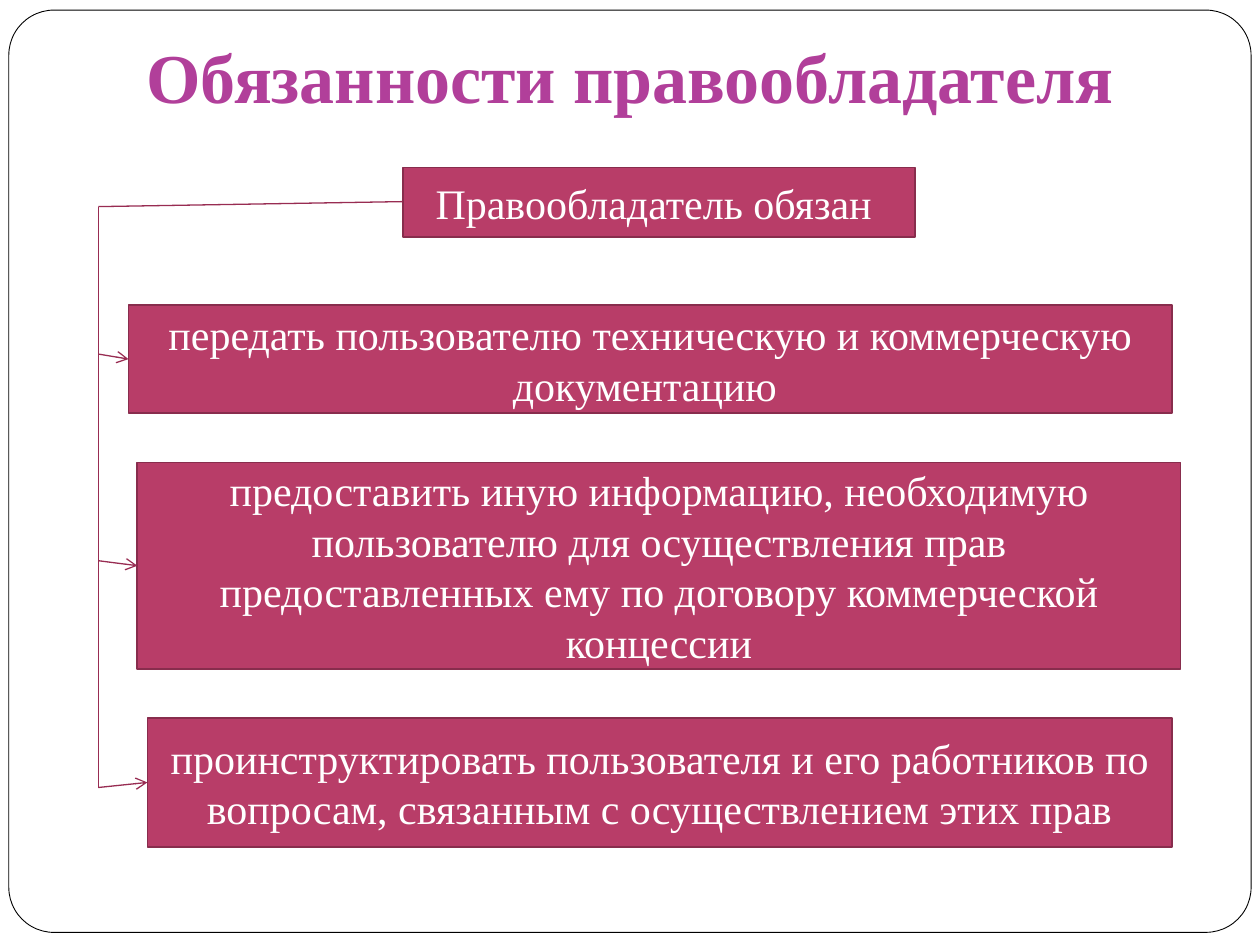
"""Slide listing the duties of the rights holder as a branching diagram."""
from lxml import etree
from pptx import Presentation
from pptx.dml.color import RGBColor
from pptx.enum import shapes, text
from pptx.oxml import ns
from pptx.util import Inches, Pt


def color(value):
    return RGBColor.from_string(value)


def write(box, words, size, ink, bold=False):
    frame = box.text_frame
    frame.word_wrap = True
    frame.vertical_anchor = text.MSO_ANCHOR.MIDDLE
    frame.text = words
    para = frame.paragraphs[0]
    para.alignment = text.PP_ALIGN.CENTER
    font = para.runs[0].font
    font.name, font.size, font.bold = "Times New Roman", Pt(size), bold
    font.color.rgb = color(ink)


deck = Presentation()
deck.slide_width, deck.slide_height = Inches(10), Inches(7.5)
page = deck.slides.add_slide(deck.slide_layouts[6])

border = page.shapes.add_shape(
    shapes.MSO_SHAPE.ROUNDED_RECTANGLE, Inches(0.07), Inches(0.08), Inches(9.86), Inches(7.32))
border.adjustments[0] = 0.049
border.shadow.inherit = False
border.fill.solid()
border.fill.fore_color.rgb = color("FFFFFF")
border.line.color.rgb = color("000000")
border.line.width = Pt(0.5)

title = page.shapes.add_textbox(0, 0, Inches(10), Inches(1.25))
write(title, "Обязанности правообладателя", 40, "B13F9A", True)
title.text_frame.margin_bottom = Inches(0.1)

blocks = [
    (3.2, 1.33, 4.06, 0.55, "Правообладатель обязан "),
    (1.02, 2.42, 8.28, 0.86,
     "передать пользователю техническую и коммерческую документацию "),
    (1.09, 3.67, 8.28, 1.64,
     "предоставить иную информацию, необходимую пользователю для осуществления прав "
     "предоставленных ему по договору коммерческой концессии"),
    (1.17, 5.7, 8.13, 1.02,
     "проинструктировать пользователя и его работников по вопросам, "
     "связанным с осуществлением этих прав"),
]
for left, top, width, height, words in blocks:
    box = page.shapes.add_shape(
        shapes.MSO_SHAPE.RECTANGLE, Inches(left), Inches(top), Inches(width), Inches(height))
    box.shadow.inherit = False
    box.fill.solid()
    box.fill.fore_color.rgb = color("B83D68")
    box.line.color.rgb = color("882D4D")
    box.line.width = Pt(1)
    write(box, words, 24, "FFFFFF")

trunk = 0.78
links = [
    (3.2, 1.6, trunk, 1.64, False),
    (trunk, 1.64, trunk, 6.25, False),
    (trunk, 6.25, 1.17, 6.21, True),
    (trunk, 4.45, 1.09, 4.49, True),
    (trunk, 2.81, 1.02, 2.85, True),
]
for x1, y1, x2, y2, has_arrow in links:
    link = page.shapes.add_connector(
        shapes.MSO_CONNECTOR.STRAIGHT, Inches(x1), Inches(y1), Inches(x2), Inches(y2))
    link.line.color.rgb = color("982C52")
    link.line.width = Pt(0.75)
    if has_arrow:
        etree.SubElement(link.line._get_or_add_ln(), ns.qn("a:tailEnd"), type="arrow")
    etree.SubElement(link._element.spPr, ns.qn("a:effectLst"))

deck.save("out.pptx")
